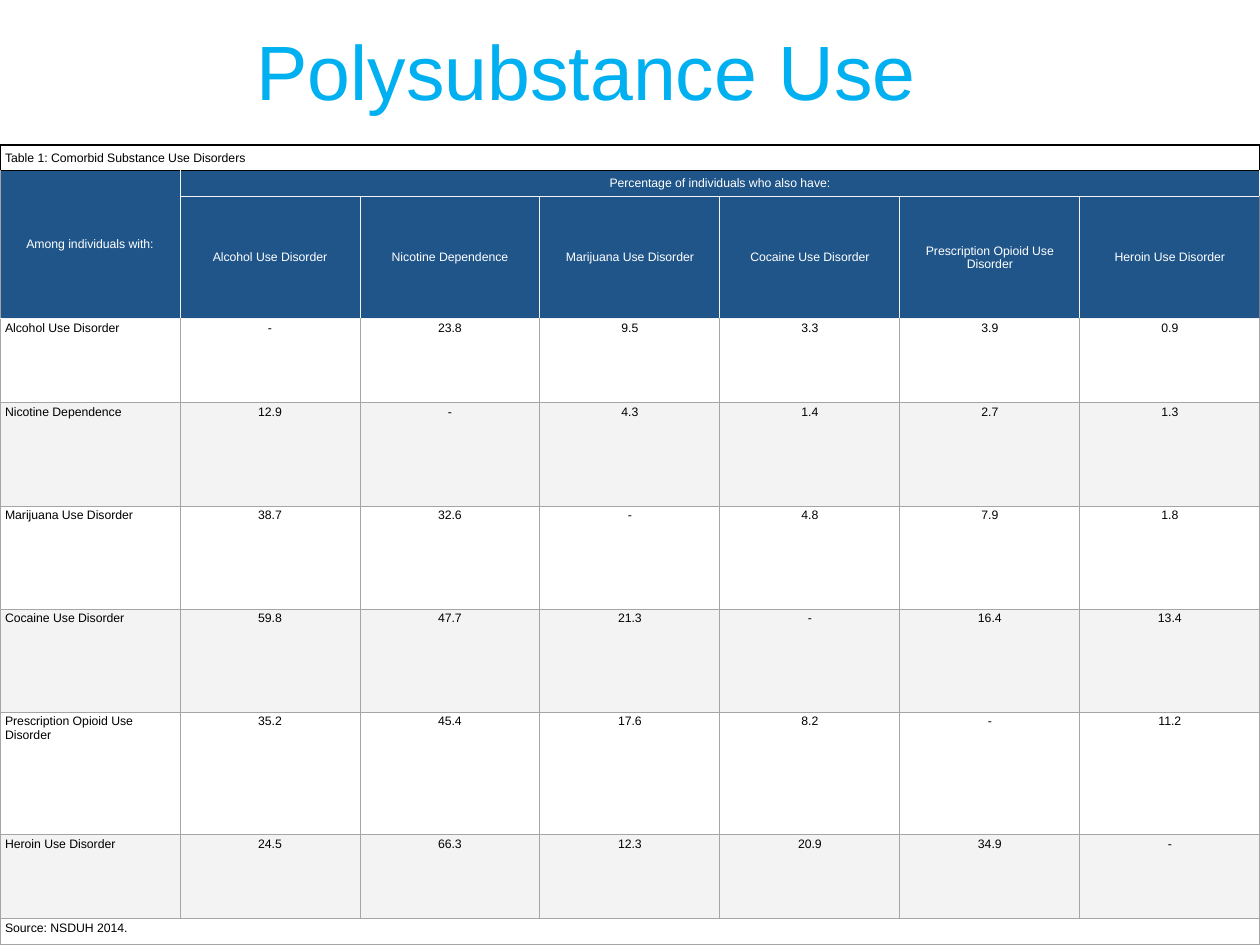
from lxml import etree
from pptx import Presentation
from pptx.dml.color import RGBColor
from pptx.enum.text import MSO_ANCHOR, PP_ALIGN
from pptx.oxml.ns import qn
from pptx.util import Pt

LEFT, CENTER = PP_ALIGN.LEFT, PP_ALIGN.CENTER
TOP, MIDDLE = MSO_ANCHOR.TOP, MSO_ANCHOR.MIDDLE
FONT = "Arial"
NO_STYLE = "{2D5ABB26-0587-4C30-8999-92F81FD0307C}"
COLORS = {
    "title": "00B0F0", "header": "20558A", "white": "FFFFFF", "black": "000000",
    "band": "F3F3F3", "grid": "A5A5A5", "header_edge": "808080",
}

# Content
TITLE = "Polysubstance Use "
CAPTION = "Table 1: Comorbid Substance Use Disorders"
ROW_HEADING = "Among individuals with:"
COLUMN_HEADING = "Percentage of individuals who also have:"
SOURCE = "Source: NSDUH 2014."
DISORDERS = [
    "Alcohol Use Disorder", "Nicotine Dependence", "Marijuana Use Disorder",
    "Cocaine Use Disorder", "Prescription Opioid Use Disorder", "Heroin Use Disorder",
]
PERCENTAGES = [
    ["-", "23.8", "9.5", "3.3", "3.9", "0.9"],
    ["12.9", "-", "4.3", "1.4", "2.7", "1.3"],
    ["38.7", "32.6", "-", "4.8", "7.9", "1.8"],
    ["59.8", "47.7", "21.3", "-", "16.4", "13.4"],
    ["35.2", "45.4", "17.6", "8.2", "-", "11.2"],
    ["24.5", "66.3", "12.3", "20.9", "34.9", "-"],
]

# Layout in points
SLIDE_W, SLIDE_H = 720, 540
TABLE_TOP = 82.8
ROW_HEIGHTS = [14.7, 14.7, 70, 48, 59, 59, 59, 70, 48, 14.7]
FIRST_BODY_ROW = 3
LAST_ROW = len(ROW_HEIGHTS) - 1
LAST_COL = len(DISORDERS)


def write(frame, text, size=7, color="black", align=LEFT):
    paragraph = frame.paragraphs[0]
    paragraph.alignment = align
    run = paragraph.add_run()
    run.text = text
    run.font.name = FONT
    run.font.size = Pt(size)
    run.font.color.rgb = RGBColor.from_string(COLORS[color])


def draw_borders(cell, edges, width=0.6):
    properties = cell._tc.get_or_add_tcPr()
    for side in "LRTB":
        color = edges.get(side)
        line = etree.SubElement(properties, qn(f"a:ln{side}"), w=str(Pt(width if color else 0)))
        if color:
            fill = etree.SubElement(line, qn("a:solidFill"))
            etree.SubElement(fill, qn("a:srgbClr"), val=COLORS[color])
        else:
            etree.SubElement(line, qn("a:noFill"))


def fill_cell(cell, color):
    if color:
        cell.fill.solid()
        cell.fill.fore_color.rgb = RGBColor.from_string(COLORS[color])
    else:
        cell.fill.background()


def cell_look(row, col):
    """Return fill, border colours and border width for one table cell."""
    if row == 0:
        edges = {"L": "black", "R": "black", "T": "black"}
        if col == 0:
            edges["B"] = "black"
        return None, edges, 1
    if row < FIRST_BODY_ROW:
        edges = dict.fromkeys("LRTB", "band")
        if col == 0:
            edges.update(L="grid", T="black")
        elif row == 1:
            edges["T"] = None
        if col == LAST_COL:
            edges["R"] = "header_edge"
        return "header", edges, 0.6
    edges = dict.fromkeys("LRTB", "grid")
    if row == FIRST_BODY_ROW:
        edges["T"] = "band"
    banded = row < LAST_ROW and (row - FIRST_BODY_ROW) % 2
    return "band" if banded else "white", edges, 0.6


presentation = Presentation()
presentation.slide_width, presentation.slide_height = Pt(SLIDE_W), Pt(SLIDE_H)
slide = presentation.slides.add_slide(presentation.slide_layouts[6])

# Title
title = slide.shapes.add_textbox(Pt(-11.5), Pt(0), Pt(705.6), Pt(79.2)).text_frame
title.word_wrap = True
title.vertical_anchor = MIDDLE
write(title, TITLE, size=44, color="title", align=CENTER)

# Table grid
table = slide.shapes.add_table(
    LAST_ROW + 1, LAST_COL + 1, Pt(0), Pt(TABLE_TOP), Pt(SLIDE_W), Pt(sum(ROW_HEIGHTS))
).table
table.first_row = table.horz_banding = False
table._tbl.tblPr.find(qn("a:tableStyleId")).text = NO_STYLE
for table_row, height in zip(table.rows, ROW_HEIGHTS):
    table_row.height = Pt(height)

# Merged cells: first and last corner
for first, last in [
    ((0, 0), (0, LAST_COL)),
    ((1, 0), (2, 0)),
    ((1, 1), (1, LAST_COL)),
    ((LAST_ROW, 0), (LAST_ROW, LAST_COL)),
]:
    table.cell(*first).merge(table.cell(*last))

# Cell text by position
texts = {(0, 0): CAPTION, (1, 0): ROW_HEADING, (1, 1): COLUMN_HEADING, (LAST_ROW, 0): SOURCE}
for number, (disorder, values) in enumerate(zip(DISORDERS, PERCENTAGES)):
    texts[2, number + 1] = disorder
    for col, text in enumerate([disorder, *values]):
        texts[FIRST_BODY_ROW + number, col] = text

# Cell formats
for row in range(LAST_ROW + 1):
    for col in range(LAST_COL + 1):
        cell = table.cell(row, col)
        fill, edges, width = cell_look(row, col)
        draw_borders(cell, edges, width)
        fill_cell(cell, fill)
        cell.margin_left = cell.margin_right = Pt(2.9)
        cell.margin_top = cell.margin_bottom = Pt(1.4)
        cell.vertical_anchor = MIDDLE if row < FIRST_BODY_ROW else TOP
        if (row, col) in texts:
            is_header = fill == "header"
            write(cell.text_frame, texts[row, col],
                  color="white" if is_header else "black",
                  align=CENTER if is_header or col else LEFT)

presentation.save("out.pptx")
